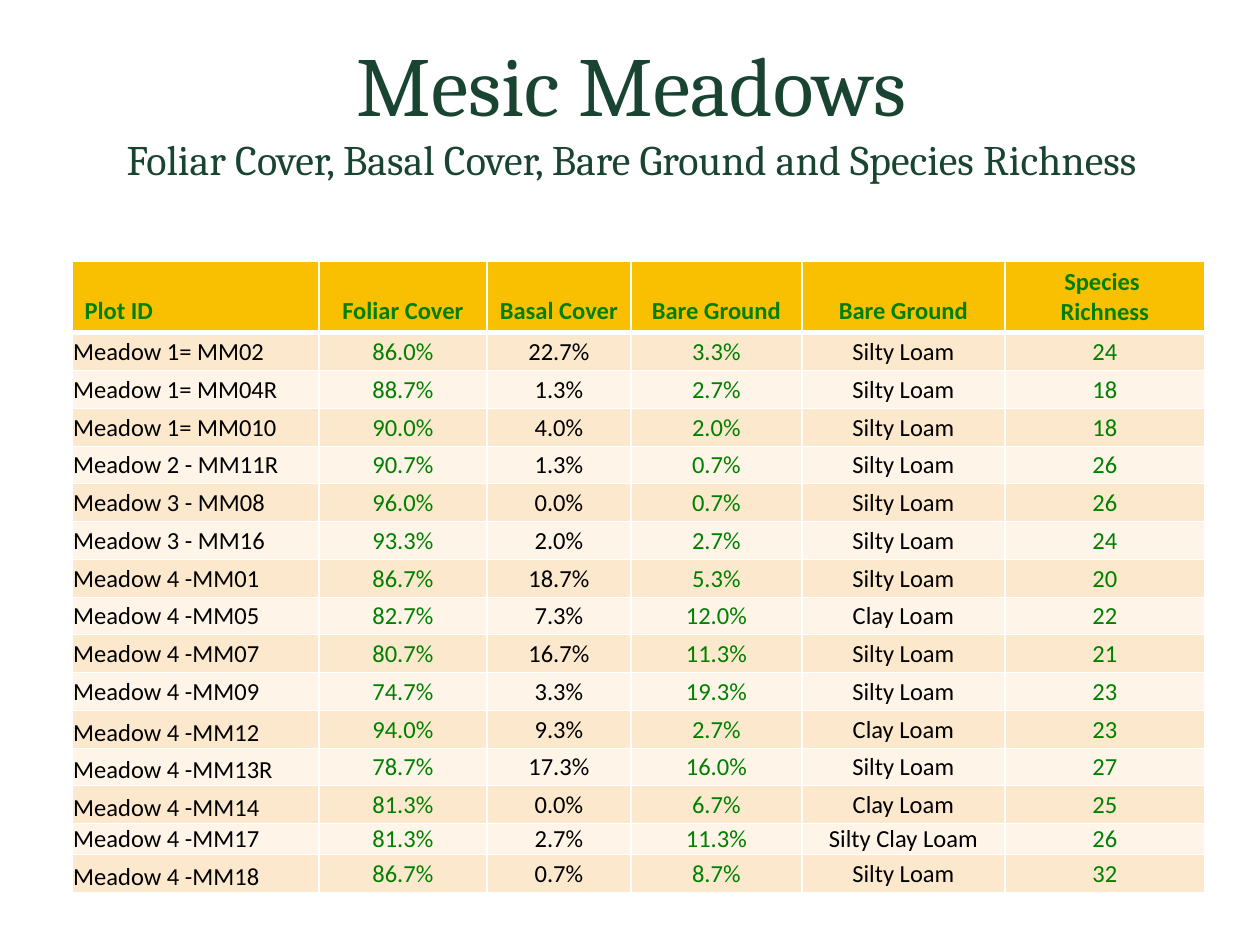
"""Builds the Mesic Meadows slide: a title over a table of plot cover and species richness."""
from dataclasses import dataclass

from lxml import etree
from pptx import Presentation
from pptx.dml.color import RGBColor
from pptx.enum.text import MSO_ANCHOR, PP_ALIGN
from pptx.oxml.ns import qn
from pptx.util import Inches, Pt

LEFT, CENTER = PP_ALIGN.LEFT, PP_ALIGN.CENTER
MIDDLE, BOTTOM = MSO_ANCHOR.MIDDLE, MSO_ANCHOR.BOTTOM

TITLE = "Mesic Meadows"
SUB = "Foliar Cover, Basal Cover, Bare Ground and Species Richness"
HEADS = ["Plot ID", "Foliar Cover", "Basal Cover", "Bare Ground", "Bare Ground",
         "Species \nRichness"]
PLOTS = [
    ("Meadow 1= MM02", "86.0%", "22.7%", "3.3%", "Silty Loam", "24"),
    ("Meadow 1= MM04R", "88.7%", "1.3%", "2.7%", "Silty Loam", "18"),
    ("Meadow 1= MM010", "90.0%", "4.0%", "2.0%", "Silty Loam", "18"),
    ("Meadow 2 - MM11R", "90.7%", "1.3%", "0.7%", "Silty Loam", "26"),
    ("Meadow 3 - MM08", "96.0%", "0.0%", "0.7%", "Silty Loam", "26"),
    ("Meadow 3 - MM16", "93.3%", "2.0%", "2.7%", "Silty Loam", "24"),
    ("Meadow 4 -MM01", "86.7%", "18.7%", "5.3%", "Silty Loam", "20"),
    ("Meadow 4 -MM05", "82.7%", "7.3%", "12.0%", "Clay Loam", "22"),
    ("Meadow 4 -MM07", "80.7%", "16.7%", "11.3%", "Silty Loam", "21"),
    ("Meadow 4 -MM09", "74.7%", "3.3%", "19.3%", "Silty Loam", "23"),
    ("Meadow 4 -MM12", "94.0%", "9.3%", "2.7%", "Clay Loam", "23"),
    ("Meadow 4 -MM13R", "78.7%", "17.3%", "16.0%", "Silty Loam", "27"),
    ("Meadow 4 -MM14", "81.3%", "0.0%", "6.7%", "Clay Loam", "25"),
    ("Meadow 4 -MM17", "81.3%", "2.7%", "11.3%", "Silty Clay Loam", "26"),
    ("Meadow 4 -MM18", "86.7%", "0.7%", "8.7%", "Silty Loam", "32"),
]
COLS = [247, 168, 144, 171, 203, 200]
ROWS = [71] + [38, 38, 38, 37] * 3 + [38, 31, 38]
GREENS = {1, 3, 5}
LOW = 11


@dataclass(frozen=True)
class Theme:
    title: str = "194431"
    green: str = "008000"
    black: str = "000000"
    head: str = "F8C000"
    bands: tuple = ("FCE8CC", "FEF4E7")
    line: str = "FFFFFF"
    serif: str = "Cambria"
    sans: str = "Calibri"
    big: int = 48
    mid: int = 24
    small: int = 14


THEME = Theme()


def px(num):
    return round(num * Inches(1) / 126)


def add_run(para, text, font, size, color, bold=False):
    run = para.add_run()
    run.text = text
    run.font.name, run.font.size, run.font.bold = font, Pt(size), bold
    run.font.color.rgb = RGBColor.from_string(color)


def set_lines(cell, widths):
    props = cell._tc.get_or_add_tcPr()
    for side, width in zip("LRTB", widths):
        line = etree.SubElement(props, qn(f"a:ln{side}"), w=str(Pt(width)))
        fill = etree.SubElement(line, qn("a:solidFill"))
        etree.SubElement(fill, qn("a:srgbClr"), val=THEME.line)


def set_pads(cell, left, top, right, base):
    cell.margin_left, cell.margin_top = Inches(left), Inches(top)
    cell.margin_right, cell.margin_bottom = Inches(right), Inches(base)


def fill_cell(cell, text, row, col):
    head = row == 0
    set_lines(cell, (1, 1, 3 if row == 1 else 1, 3 if head else 1))
    cell.fill.solid()
    shade = THEME.head if head else THEME.bands[(row - 1) % 2]
    cell.fill.fore_color.rgb = RGBColor.from_string(shade)
    if head:
        side = 0.1 if col < 2 else 0.05
        set_pads(cell, side, 0.05, side, 0.05)
    else:
        set_pads(cell, 0.01, 0.01, 0.01, 0)
    low = head or (col == 0 and row >= LOW)
    cell.vertical_anchor = BOTTOM if low else MIDDLE
    color = THEME.green if head or col in GREENS else THEME.black
    frame = cell.text_frame
    for num, part in enumerate(text.split("\n")):
        para = frame.add_paragraph() if num else frame.paragraphs[0]
        para.alignment = CENTER if col else LEFT
        add_run(para, part, THEME.sans, THEME.small, color, head)


def add_title(slide):
    frame = slide.shapes.add_textbox(px(29), px(11), px(1205), px(195)).text_frame
    frame.word_wrap = True
    frame.vertical_anchor = MIDDLE
    para = frame.paragraphs[0]
    para.alignment = CENTER
    add_run(para, TITLE, THEME.serif, THEME.big, THEME.title)
    para.add_line_break()
    add_run(para, SUB, THEME.serif, THEME.mid, THEME.title)


def add_grid(slide):
    table = slide.shapes.add_table(len(ROWS), len(COLS), px(72), px(261),
                                   px(sum(COLS)), px(sum(ROWS))).table
    for col, width in zip(table.columns, COLS):
        col.width = px(width)
    for row, height in zip(table.rows, ROWS):
        row.height = px(height)
    for row, texts in enumerate([HEADS, *PLOTS]):
        for col, text in enumerate(texts):
            fill_cell(table.cell(row, col), text, row, col)


def main():
    deck = Presentation()
    deck.slide_width, deck.slide_height = px(1260), px(945)
    slide = deck.slides.add_slide(deck.slide_layouts[6])
    add_title(slide)
    add_grid(slide)
    deck.save("out.pptx")


if __name__ == "__main__":
    main()
